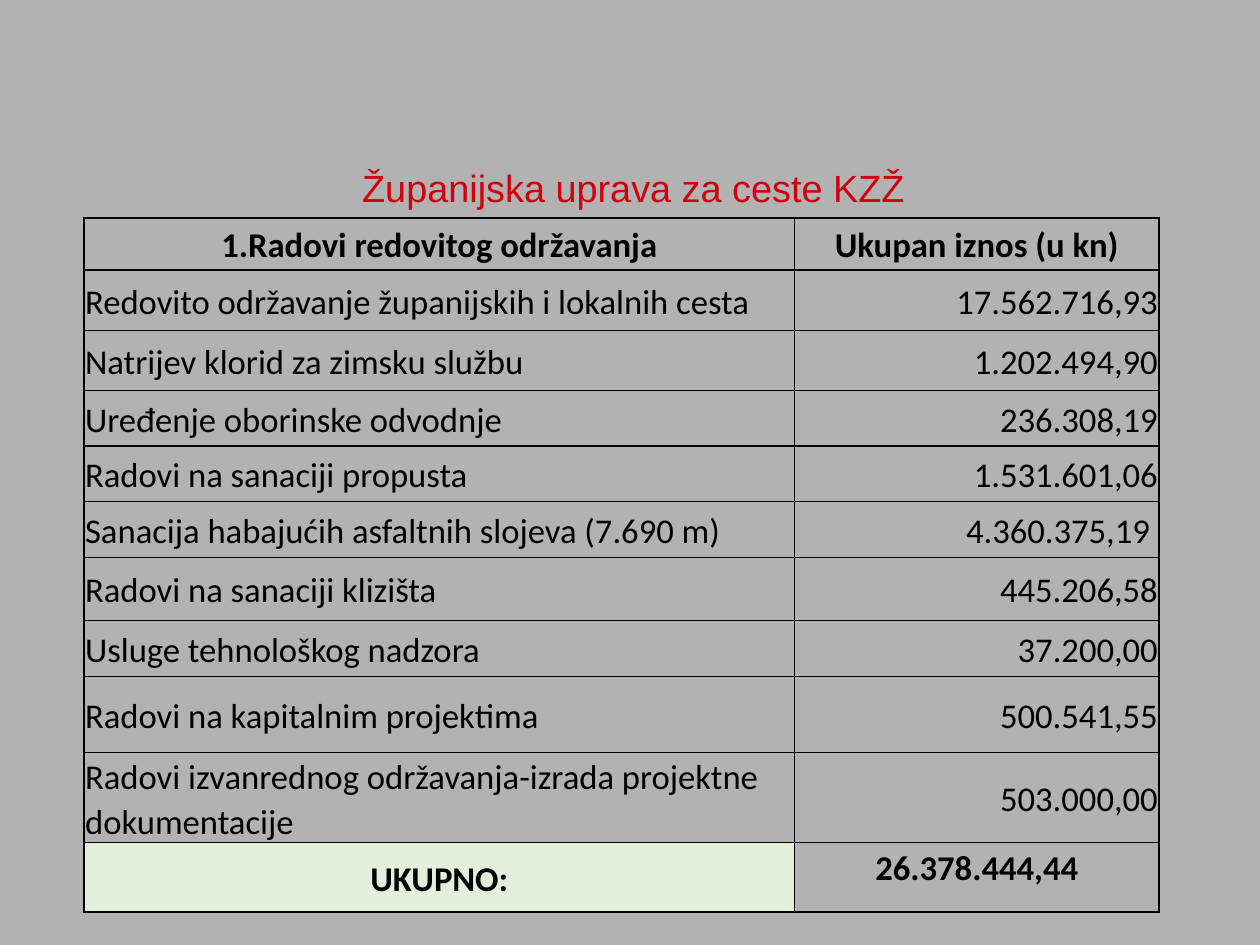
from dataclasses import dataclass
from lxml.etree import SubElement
from pptx import Presentation
from pptx.dml.color import RGBColor as Rgb
from pptx.enum.text import MSO_ANCHOR as Anchor, PP_ALIGN as Align
from pptx.oxml.ns import qn
from pptx.util import Inches, Pt

TITLE = "Županijska uprava za ceste KZŽ"
HEAD = ("1.Radovi redovitog održavanja", "Ukupan iznos (u kn)")
WORKS = [
    ("Redovito održavanje županijskih i lokalnih cesta", "17.562.716,93"),
    ("Natrijev klorid za zimsku službu", "1.202.494,90"),
    ("Uređenje oborinske odvodnje", "236.308,19"),
    ("Radovi na sanaciji propusta", "1.531.601,06"),
    ("Sanacija habajućih asfaltnih slojeva (7.690 m)", "4.360.375,19 "),
    ("Radovi na sanaciji klizišta", "445.206,58"),
    ("Usluge tehnološkog nadzora", "37.200,00"),
    ("Radovi na kapitalnim projektima", "500.541,55"),
    ("Radovi izvanrednog održavanja-izrada projektne dokumentacije",
     "503.000,00"),
]
TOTAL = ("UKUPNO:", "26.378.444,44")
ROWS = [HEAD, *WORKS, TOTAL]

WIDE = 11.1
SIZE = (WIDE, WIDE * 3 / 4)
TITLE_BOX = (1.22, 1.38, 8.72, 0.54)
LEFT, TOP = 0.74, 1.92
COLS = (6.26, 3.21)
HIGH = (0.46, 0.53, 0.53, 0.49, 0.49, 0.49, 0.56, 0.49, 0.67, 0.77, 0.61)
INSET = 0.01
LIFT = 0.19  # bottom inset that raises the total amount


@dataclass(frozen=True)
class Theme:
    back: str = "B2B2B2"
    title: str = "D1000E"
    ink: str = "000000"
    total: str = "E2EFDA"
    title_font: str = "Arial"
    body_font: str = "Calibri"
    title_size: int = 24
    body_size: int = 22
    line: int = 1


THEME = Theme()


def style(para, font, size, color, align, bold=False):
    para.alignment = align
    for run in para.runs:
        run.font.name, run.font.size, run.font.bold = font, Pt(size), bold
        run.font.color.rgb = Rgb.from_string(color)


def add_title(slide):
    box = slide.shapes.add_textbox(*map(Inches, TITLE_BOX))
    frame = box.text_frame
    frame.word_wrap = True
    frame.vertical_anchor = Anchor.MIDDLE
    frame.text = TITLE
    style(frame.paragraphs[0], THEME.title_font, THEME.title_size,
          THEME.title, Align.CENTER)


def add_border(cell):
    props = cell._tc.get_or_add_tcPr()
    for side in ("lnL", "lnR", "lnT", "lnB"):
        line = SubElement(props, qn(f"a:{side}"), w=str(Pt(THEME.line)))
        fill = SubElement(line, qn("a:solidFill"))
        SubElement(fill, qn("a:srgbClr"), val=THEME.ink)


def fill_cell(cell, text, row, col):
    last = row == len(ROWS) - 1
    strong = last or row == 0
    add_border(cell)
    if last and col == 0:
        cell.fill.solid()
        cell.fill.fore_color.rgb = Rgb.from_string(THEME.total)
    else:
        cell.fill.background()
    cell.vertical_anchor = Anchor.MIDDLE
    cell.margin_left = cell.margin_right = cell.margin_top = Inches(INSET)
    cell.margin_bottom = Inches(LIFT if last and col else 0)
    cell.text_frame.text = text
    para = cell.text_frame.paragraphs[0]
    para.line_spacing = 1.07
    align = Align.CENTER if strong else (Align.LEFT, Align.RIGHT)[col]
    style(para, THEME.body_font, THEME.body_size, THEME.ink, align, strong)


def add_costs(slide):
    area = map(Inches, (LEFT, TOP, sum(COLS), sum(HIGH)))
    table = slide.shapes.add_table(len(ROWS), len(COLS), *area).table
    table.first_row = table.horz_banding = False
    for col, width in zip(table.columns, COLS):
        col.width = Inches(width)
    for row, height in zip(table.rows, HIGH):
        row.height = Inches(height)
    for r, texts in enumerate(ROWS):
        for c, text in enumerate(texts):
            fill_cell(table.cell(r, c), text, r, c)


def main():
    deck = Presentation()
    deck.slide_width, deck.slide_height = map(Inches, SIZE)
    slide = deck.slides.add_slide(deck.slide_layouts[6])
    slide.background.fill.solid()
    slide.background.fill.fore_color.rgb = Rgb.from_string(THEME.back)
    add_title(slide)
    add_costs(slide)
    deck.save("out.pptx")


if __name__ == "__main__":
    main()
